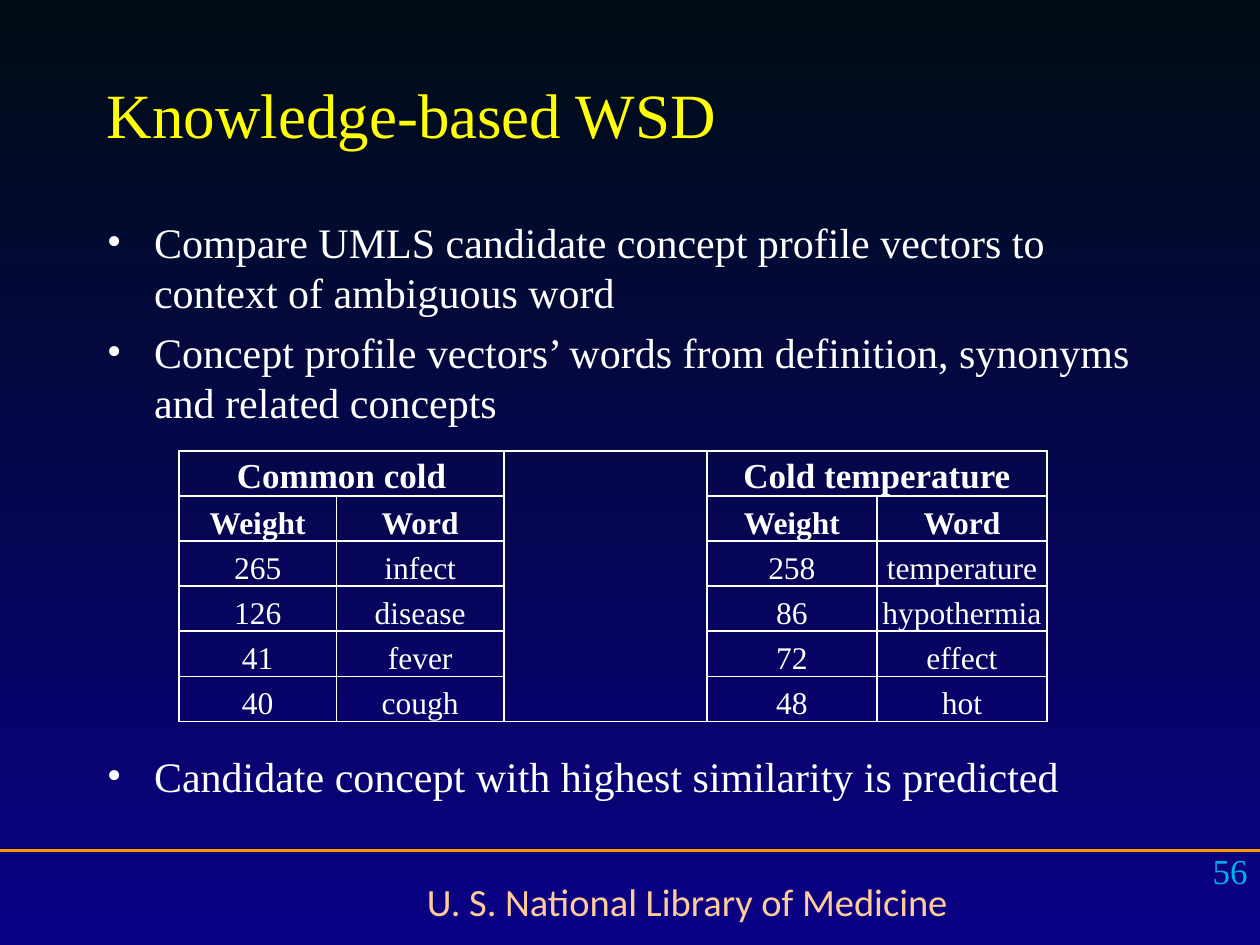
from lxml import etree
from pptx import Presentation
from pptx import util as u
from pptx.dml.color import RGBColor
from pptx.enum import shapes, text
from pptx.oxml.ns import qn

WHITE = RGBColor(0xFF, 0xFF, 0xFF)
YELLOW = RGBColor(0xFF, 0xFF, 0x00)
PEACH = RGBColor(0xFF, 0xCC, 0x99)
ORANGE = RGBColor(0xFF, 0x99, 0x00)
CYAN = RGBColor(0x00, 0xB0, 0xF0)
BLACK = RGBColor(0x00, 0x0D, 0x14)
NAVY = RGBColor(0x0A, 0x00, 0x86)
SERIF = "Times New Roman"
LEFT, MID, RIGHT = text.PP_ALIGN.LEFT, text.PP_ALIGN.CENTER, text.PP_ALIGN.RIGHT

deck = Presentation()
deck.slide_width, deck.slide_height = u.Inches(10), u.Inches(7.5)
col, row = deck.slide_width / 40, deck.slide_height / 30
slide = deck.slides.add_slide(deck.slide_layouts[6])

back = slide.background.fill
back.gradient()
back.gradient_angle = 270
for stop, tone in zip(back.gradient_stops, (BLACK, NAVY)):
    stop.color.rgb = tone


def style(para, size, color, align=LEFT, face=SERIF, bold=False):
    para.alignment = align
    font = para.font
    font.size, font.name, font.bold = u.Pt(size), face, bold
    font.color.rgb = color


def add_box(x, y, w, h, words=""):
    box = slide.shapes.add_textbox(int(x * col), int(y * row), int(w * col), int(h * row))
    frame = box.text_frame
    frame.word_wrap = True
    frame.text = words
    return frame


rule = slide.shapes.add_connector(
    shapes.MSO_CONNECTOR.STRAIGHT, 0, int(27 * row), int(40 * col), int(27 * row))
rule.line.color.rgb = ORANGE
rule.line.width = u.Pt(1.5)
etree.SubElement(rule._element.spPr, qn("a:effectLst"))

foot = add_box(9.28, 27.68, 25.08, 1.88, "U. S. National Library of Medicine")
style(foot.paragraphs[0], 22, PEACH, MID, "Calibri")

title = add_box(3, 2, 34, 3, "Knowledge-based WSD")
title.vertical_anchor = text.MSO_ANCHOR.BOTTOM
style(title.paragraphs[0], 36, YELLOW)

points = {
    "Compare UMLS candidate concept profile vectors to context of ambiguous word": 0,
    "Concept profile vectors’ words from definition, synonyms and related concepts": 5,
    "Candidate concept with highest similarity is predicted": 185,
}
body = add_box(3, 6.68, 34, 20, "\n".join(points))
for para, gap in zip(body.paragraphs, points.values()):
    props = para._p.get_or_add_pPr()
    props.set("marL", str(int(1.5 * col)))
    props.set("indent", str(int(-1.5 * col)))
    etree.SubElement(props, qn("a:buFont"), typeface=SERIF)
    etree.SubElement(props, qn("a:buChar"), char="•")
    para.space_before = u.Pt(gap)
    style(para, 24, WHITE)

number = add_box(30.68, 26.76, 9.32, 2.08, "56")
style(number.paragraphs[0], 20, CYAN, RIGHT)

data = [
    ("Common cold", "", "", "Cold temperature", ""),
    ("Weight", "Word", "", "Weight", "Word"),
    ("265", "infect", "", "258", "temperature"),
    ("126", "disease", "", "86", "hypothermia"),
    ("41", "fever", "", "72", "effect"),
    ("40", "cough", "", "48", "hot"),
]
widths = [5, 5.32, 6.44, 5.4, 5.4]
high = 1.43
table = slide.shapes.add_table(
    len(data), len(widths), int(5.68 * col), int(14.32 * row),
    int(sum(widths) * col), int(len(data) * high * row)).table
table.first_row = table.horz_banding = False
for part, wide in zip(table.columns, widths):
    part.width = int(wide * col)

for r, line in enumerate(data):
    table.rows[r].height = int(high * row)
    for c, word in enumerate(line):
        cell = table.cell(r, c)
        cell.text = word
        cell.vertical_anchor = text.MSO_ANCHOR.BOTTOM
        cell.margin_left = cell.margin_right = cell.margin_top = u.Inches(0.01)
        cell.margin_bottom = 0
        style(cell.text_frame.paragraphs[0], 18 if r else 20, WHITE, MID, bold=r < 2)
        cell.fill.background()
        for i, side in enumerate("LR" if c == 2 else "LRTB"):
            edge = etree.Element(qn("a:ln" + side), w=str(u.Pt(1)))
            fill = etree.SubElement(edge, qn("a:solidFill"))
            etree.SubElement(fill, qn("a:srgbClr"), val=str(WHITE))
            cell._tc.tcPr.insert(i, edge)

table.cell(0, 0).merge(table.cell(0, 1))
table.cell(0, 2).merge(table.cell(5, 2))
table.cell(0, 3).merge(table.cell(0, 4))

deck.save("out.pptx")
